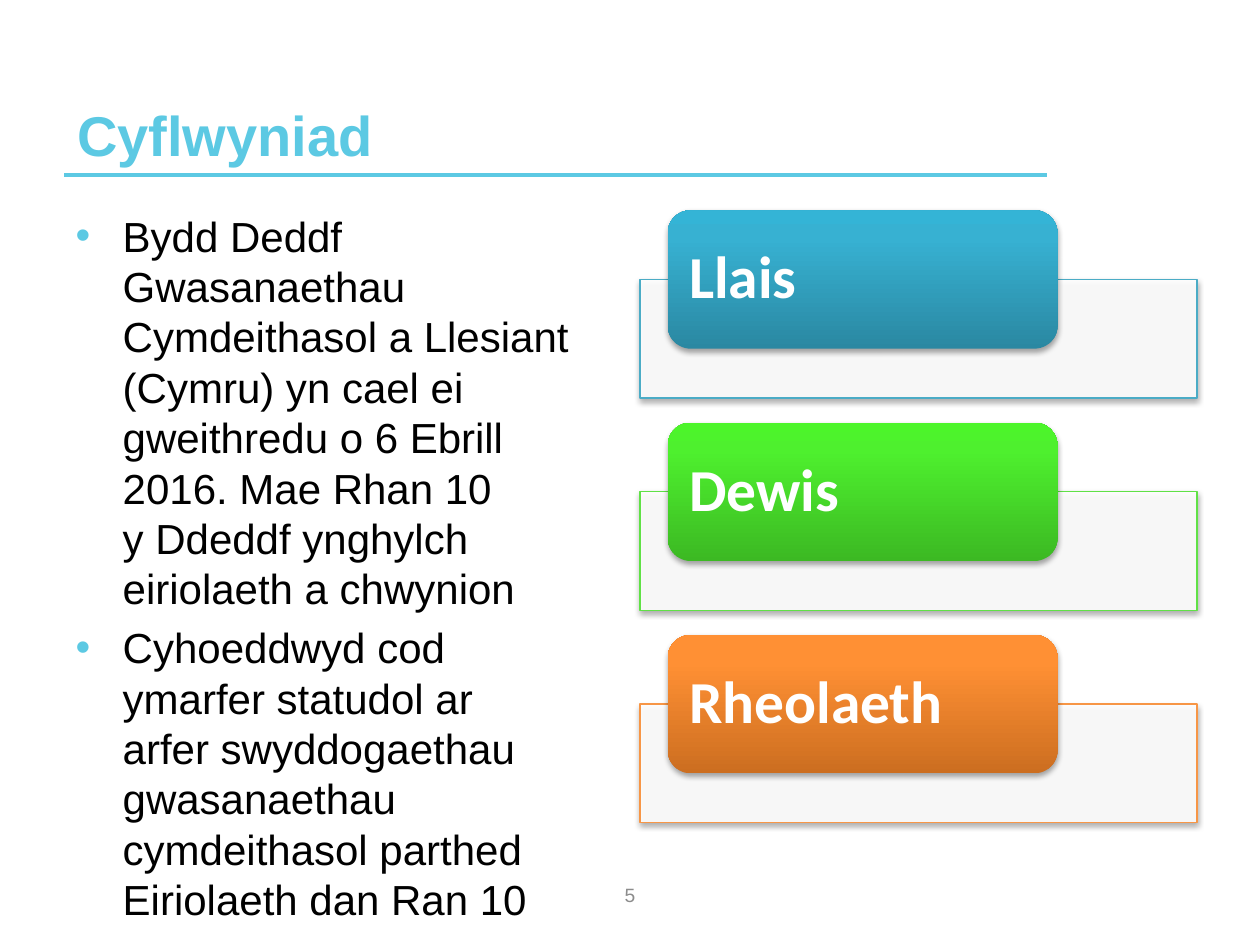
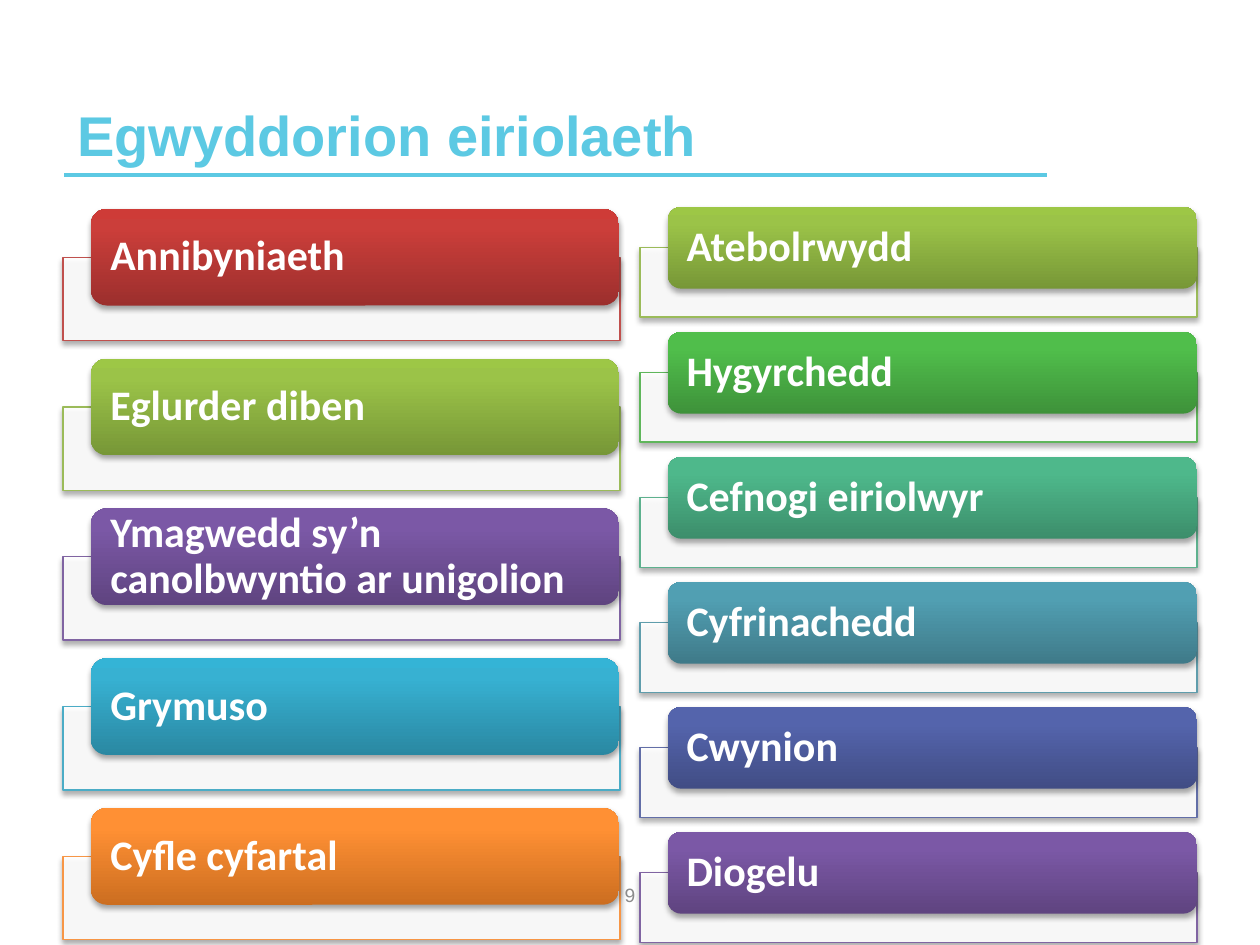
"""Build two Welsh slides on advocacy: an introduction and its principles."""
from copy import deepcopy

from lxml.etree import SubElement
from pptx import Presentation
from pptx.dml.color import RGBColor
from pptx.enum.shapes import MSO_CONNECTOR as LINE, MSO_SHAPE as SHAPE
from pptx.enum.text import MSO_ANCHOR as ANCHOR, MSO_AUTO_SIZE as AUTO, PP_ALIGN as ALIGN
from pptx.oxml.ns import qn
from pptx.util import Cm, Pt

SKY = RGBColor(0x5C, 0xC9, 0xE3)
BLACK = RGBColor(0, 0, 0)
WHITE = RGBColor(255, 255, 255)
GREY = RGBColor(0x8C, 0x8C, 0x8C)

PALETTES = {
    name: [RGBColor.from_string(c) for c in codes.split()]
    for name, codes in {
        "aqua": "4BACC6 2A88A2 37B1D2 34B4D6",
        "lime": "60E146 3CB923 4EF02E 4CF52A",
        "orange": "F79646 CC6E20 FF9034 FF9136",
        "red": "C0504D 9C2F2D CB3E3A CE3B37",
        "olive": "9BBB59 779737 9BC348 9DC746",
        "purple": "8064A2 5F4480 7B58A6 7C57A8",
        "green": "5FB65B 3E923A 50BE4B 4FC149",
        "jade": "5DB18E 3C8E6B 4EB88B 4CBB8C",
        "teal": "5F9DAC 3F7A89 519FB2 50A0B5",
        "indigo": "626EA7 414D85 5464AC 5363AF",
    }.items()
}
STOPS = (0, 0.8, 1)

LEFT_COL, RIGHT_COL, COL_W = 1.27, 12.9, 11.23
GUTTER_LEFT = LEFT_COL + COL_W
GUTTER_W = RIGHT_COL - GUTTER_LEFT
TAB_INDENT = 0.56

SLIDES = [
    {
        "title": "Cyflwyniad",
        "number": "5",
        "bullets": [
            "Bydd Deddf Gwasanaethau Cymdeithasol a Llesiant (Cymru) yn cael ei "
            "gweithredu o 6 Ebrill 2016. Mae Rhan 10 \ny Ddeddf ynghylch eiriolaeth a chwynion",
            "Cyhoeddwyd cod \nymarfer statudol ar \narfer swyddogaethau gwasanaethau "
            "cymdeithasol parthed Eiriolaeth dan Ran 10",
        ],
        "stacks": [
            {"left": RIGHT_COL, "top": 4.24, "pitch": 4.28, "tab_w": 7.86, "tab_h": 2.79,
             "panel_h": 2.39, "size": 34,
             "items": [("Llais", "aqua"), ("Dewis", "lime"), ("Rheolaeth", "orange")]},
        ],
    },
    {
        "title": "Egwyddorion eiriolaeth",
        "number": "9",
        "bullets": [],
        "stacks": [
            {"left": LEFT_COL, "top": 4.21, "pitch": 3.02, "tab_w": 10.65, "tab_h": 1.95,
             "panel_h": 1.68, "size": 24,
             "items": [("Annibyniaeth", "red"), ("Eglurder diben", "olive"),
                       ("Ymagwedd sy’n canolbwyntio ar unigolion", "purple"),
                       ("Grymuso", "aqua"), ("Cyfle cyfartal", "orange")]},
            {"left": RIGHT_COL, "top": 4.17, "pitch": 2.52, "tab_w": 10.67, "tab_h": 1.65,
             "panel_h": 1.4, "size": 24,
             "items": [("Atebolrwydd", "olive"), ("Hygyrchedd", "green"),
                       ("Cefnogi eiriolwyr", "jade"), ("Cyfrinachedd", "teal"),
                       ("Cwynion", "indigo"), ("Diogelu", "purple")]},
        ],
    },
]


def set_attrs(obj, **values):
    for name, value in values.items():
        setattr(obj, name, value)


def place(sp, left, top, width, height):
    set_attrs(sp, left=Cm(left), top=Cm(top), width=Cm(width), height=Cm(height))


def write(p, text, size, color, font="Arial", bold=False):
    p.text = text
    for r in p.runs:
        set_attrs(r.font, name=font, size=Pt(size), bold=bold)
        r.font.color.rgb = color
    for br in p._p.findall(qn("a:br")):
        br.append(deepcopy(p.runs[0]._r.rPr))


def add_element(parent, tag, **attrs):
    return SubElement(parent, qn(tag), {k: str(v) for k, v in attrs.items()})


def add_shadow(sp):
    sp.shadow.inherit = False
    effects = sp._element.spPr.find(qn("a:effectLst"))
    outer = add_element(effects, "a:outerShdw", blurRad=Pt(3.15), dist=Pt(1.81),
                        dir=5400000, rotWithShape=0)
    color = add_element(outer, "a:srgbClr", val=BLACK)
    add_element(color, "a:alpha", val=35000)


def add_panel(s, box, outline):
    sp = s.shapes.add_shape(SHAPE.RECTANGLE, *map(Cm, box))
    sp.fill.solid()
    sp.fill.fore_color.rgb = WHITE
    fill = sp._element.spPr.find(qn("a:solidFill"))
    add_element(fill[0], "a:alpha", val=90000)
    sp.line.color.rgb = outline
    sp.line.width = Pt(0.75)
    add_shadow(sp)


def add_tab(s, box, text, size, colors):
    sp = s.shapes.add_shape(SHAPE.ROUNDED_RECTANGLE, *map(Cm, box))
    sp.fill.gradient()
    sp.fill.gradient_angle = 90
    stops = sp._element.spPr.find(".//" + qn("a:gsLst"))
    stops.append(deepcopy(stops[-1]))
    for stop, color, position in zip(sp.fill.gradient_stops, colors, STOPS):
        stop.color.rgb = color
        stop.position = position
    sp.line.fill.background()
    add_shadow(sp)
    tf = sp.text_frame
    set_attrs(tf, word_wrap=True, vertical_anchor=ANCHOR.MIDDLE, margin_left=Cm(0.3),
              margin_right=Cm(0.3), margin_top=0, margin_bottom=0)
    p = tf.paragraphs[0]
    set_attrs(p, alignment=ALIGN.LEFT, line_spacing=0.9)
    write(p, text, size, WHITE, "Calibri", True)


def add_stack(s, left, top, pitch, tab_w, tab_h, panel_h, size, items):
    for i, (text, palette) in enumerate(items):
        y = top + i * pitch
        outline, *gradient = PALETTES[palette]
        add_panel(s, (left, y + tab_h / 2, COL_W, panel_h), outline)
        add_tab(s, (left + TAB_INDENT, y, tab_w, tab_h), text, size, gradient)


def add_bullets(s, bullets):
    sp = s.placeholders[1]
    place(sp, LEFT_COL, 4.11, COL_W, 14.7)
    tf = sp.text_frame
    set_attrs(tf, word_wrap=True, auto_size=AUTO.NONE)
    for i, text in enumerate(bullets):
        p = tf.add_paragraph() if i else tf.paragraphs[0]
        pPr = p._p.get_or_add_pPr()
        pPr.set("marL", str(Cm(0.95)))
        pPr.set("indent", str(-Cm(0.95)))
        add_element(add_element(pPr, "a:buClr"), "a:srgbClr", val=SKY)
        add_element(pPr, "a:buFont", typeface="Arial")
        add_element(pPr, "a:buChar", char="•")
        p.space_before = Pt(4.8 if i else 0)
        write(p, text, 24, BLACK)


def add_frame(s, title, number):
    rule = s.shapes.add_connector(LINE.STRAIGHT, Cm(1.3), Cm(3.53), Cm(21.11), Cm(3.53))
    rule.line.color.rgb = SKY
    rule.line.width = Pt(2)
    add_element(rule._element.spPr, "a:effectLst")

    sp = s.shapes.title
    place(sp, 1.3, 0.74, 19.81, 2.77)
    set_attrs(sp.text_frame, word_wrap=True, auto_size=AUTO.NONE,
              vertical_anchor=ANCHOR.BOTTOM)
    p = sp.text_frame.paragraphs[0]
    p.alignment = ALIGN.LEFT
    write(p, title, 32, SKY, bold=True)

    box = (GUTTER_LEFT, 17.53, GUTTER_W, 1.02)
    tf = s.shapes.add_textbox(*map(Cm, box)).text_frame
    set_attrs(tf, word_wrap=True, vertical_anchor=ANCHOR.MIDDLE,
              margin_left=0, margin_right=0)
    p = tf.paragraphs[0]
    p.alignment = ALIGN.CENTER
    write(p, number, 11, GREY)


def main():
    prs = Presentation()
    set_attrs(prs, slide_width=Cm(25.4), slide_height=Cm(19.05))
    for content in SLIDES:
        layout = prs.slide_layouts[1 if content["bullets"] else 5]
        s = prs.slides.add_slide(layout)
        if content["bullets"]:
            add_bullets(s, content["bullets"])
        for stack in content["stacks"]:
            add_stack(s, **stack)
        add_frame(s, content["title"], content["number"])
    prs.save("out.pptx")


if __name__ == "__main__":
    main()
